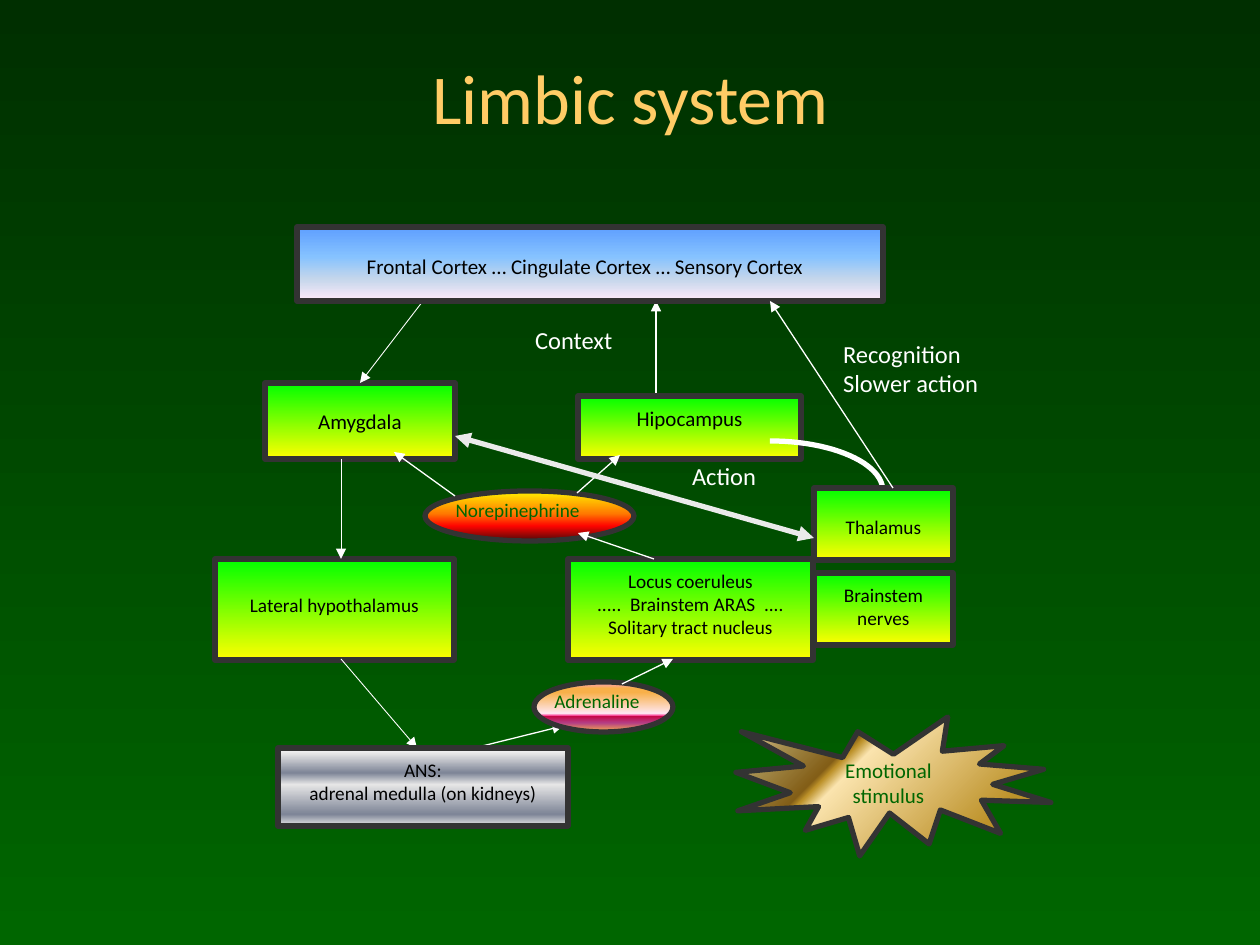
import math
from dataclasses import dataclass

from lxml import etree
from pptx import Presentation
from pptx import util as u
from pptx.dml.color import RGBColor
from pptx.enum import shapes, text
from pptx.oxml import ns

EMU_PER_PX = 914400 / 126
RECT = shapes.MSO_SHAPE.RECTANGLE
OVAL = shapes.MSO_SHAPE.OVAL
SEAL = shapes.MSO_SHAPE.EXPLOSION1
LEFT = text.PP_ALIGN.LEFT
CENTER = text.PP_ALIGN.CENTER


@dataclass(frozen=True)
class Theme:
    font: str = "Calibri"
    title: str = "FFCC66"
    white: str = "FFFFFF"
    black: str = "000000"
    green: str = "006600"
    border: str = "333333"
    action: str = "EAEAEA"
    title_size: int = 40
    label_size: int = 14
    large: int = 12
    small: int = 11
    thick: float = 3
    thin: float = 0.75
    hairline: float = 0.5
    backdrop: tuple = ((0, "002F00"), (100, "006600"))
    lime: tuple = ((0, "00FF00"), (100, "FFFF00"))
    sky: tuple = ((0, "5E9EFF"), (40, "85C2FF"), (70, "C4D6EB"), (100, "FFEBFA"))
    silver: tuple = ((0, "FFFFFF"), (7, "E6E6E6"), (32, "7D8496"),
                     (47, "E6E6E6"), (85, "7D8496"), (100, "E6E6E6"))
    fire: tuple = ((0, "FFF200"), (45, "FF7A00"), (70, "FF0300"), (100, "4D0808"))
    rose: tuple = ((0, "FC9FCB"), (13, "F8B049"), (21, "F8B049"), (63, "FEE7F2"),
                   (67, "F952A0"), (69, "C50849"), (82, "B43E85"), (100, "F8B049"))
    gold: tuple = ((0, "FBE4AE"), (13, "BD922A"), (21, "BD922A"), (63, "FBE4AE"),
                   (67, "BD922A"), (69, "835E17"), (82, "A28949"), (100, "FAE3B7"))


THEME = Theme()


def px(*lengths):
    return [u.Emu(round(length * EMU_PER_PX)) for length in lengths]


def sub(parent, tag, **attributes):
    return etree.SubElement(parent, ns.qn(tag), attributes)


def set_gradient(fill, stops, radial=False):
    fill.gradient()
    gradient = fill._fill._gradFill
    for child in list(gradient):
        gradient.remove(child)
    stop_list = sub(gradient, "a:gsLst")
    for position, color in stops:
        stop = sub(stop_list, "a:gs", pos=str(position * 1000))
        sub(stop, "a:srgbClr", val=color)
    if radial:
        circle = sub(gradient, "a:path", path="circle")
        sub(circle, "a:fillToRect", l="100000", t="100000")
    else:
        sub(gradient, "a:lin", ang="5400000", scaled="0")


def set_line(line, color, width):
    line.color.rgb = RGBColor.from_string(color)
    line.width = u.Pt(width)


def write(frame, lines, size, color, align=LEFT, insets=(0, 0, 0, 0),
          anchor=text.MSO_ANCHOR.TOP):
    frame.word_wrap = True
    frame.vertical_anchor = anchor
    (frame.margin_left, frame.margin_top,
     frame.margin_right, frame.margin_bottom) = px(*insets)
    for index, line in enumerate(lines):
        paragraph = frame.add_paragraph() if index else frame.paragraphs[0]
        paragraph.alignment = align
        run = paragraph.add_run()
        run.text = line
        run.font.name = THEME.font
        run.font.size = u.Pt(size)
        run.font.color.rgb = RGBColor.from_string(color)


def add_label(slide, box, lines, size=THEME.label_size, color=THEME.white, **layout):
    label = slide.shapes.add_textbox(*px(*box))
    write(label.text_frame, lines, size, color, **layout)


def add_node(slide, kind, box, stops, lines, size=THEME.small, color=THEME.black,
             align=CENTER, top=10, right=0):
    node = slide.shapes.add_shape(kind, *px(*box))
    node.shadow.inherit = False
    set_gradient(node.fill, stops, radial=kind == SEAL)
    set_line(node.line, THEME.border, THEME.thick)
    write(node.text_frame, lines, size, color, align, (0, top, right, 0))
    return node


def add_arrow(slide, start, end, width=THEME.thin, color=THEME.white, both=False):
    arrow = slide.shapes.add_connector(
        shapes.MSO_CONNECTOR.STRAIGHT, *px(*start, *end))
    set_line(arrow.line, color, width)
    outline = arrow.line._get_or_add_ln()
    if both:
        sub(outline, "a:headEnd", type="triangle")
    sub(outline, "a:tailEnd", type="triangle")
    sub(arrow._element.spPr, "a:effectLst")
    return arrow


def add_quarter_arc(slide, center, radius_x, radius_y, steps=24):
    angles = [math.pi / 2 * step / steps for step in range(steps + 1)]
    points = [px(center[0] + radius_x * math.sin(angle),
                 center[1] - radius_y * math.cos(angle)) for angle in angles]
    builder = slide.shapes.build_freeform(*points[0])
    builder.add_line_segments(points[1:], close=False)
    arc = builder.convert_to_shape()
    arc.shadow.inherit = False
    arc.fill.background()
    set_line(arc.line, THEME.white, THEME.thick)


def add_body_response(slide):
    add_node(slide, RECT, (215, 559, 239, 101), THEME.lime,
             ["Lateral hypothalamus"], top=34)
    amygdala = add_node(slide, RECT, (265, 383, 190, 76), THEME.lime,
                        ["Amygdala"], THEME.large, top=26)
    add_arrow(slide, (341, 659), (417, 748), THEME.hairline)
    add_arrow(slide, (462, 751), (563, 726))
    add_arrow(slide, (341, 459), (341, 559), THEME.hairline)
    cortex_to_amygdala = add_arrow(slide, (423, 301), (360, 383), THEME.hairline)
    cortex_to_amygdala.end_connect(amygdala, 0)
    add_node(slide, RECT, (278, 748, 290, 78), THEME.silver,
             ["ANS:", "adrenal medulla (on kidneys)"])


def add_arousal(slide):
    add_node(slide, RECT, (578, 396, 223, 63), THEME.lime, ["Hipocampus"], THEME.large)
    add_node(slide, SEAL, (736, 717, 315, 139), THEME.gold,
             ["Emotional", "stimulus"], THEME.large, THEME.green, top=0, right=6)
    add_node(slide, OVAL, (534, 682, 139, 50), THEME.rose, ["Adrenaline"],
             color=THEME.green, align=LEFT, top=0)
    add_node(slide, RECT, (568, 559, 245, 101), THEME.lime,
             ["Locus coeruleus", ".....  Brainstem ARAS  ....", "Solitary tract nucleus"])
    add_node(slide, OVAL, (425, 491, 209, 50), THEME.fire, ["Norepinephrine"],
             color=THEME.green, align=LEFT, top=0)
    for start, end in (((577, 493), (620, 455)), ((455, 496), (394, 452)),
                       ((654, 559), (578, 533)), ((622, 684), (673, 659)),
                       ((656, 393), (656, 301))):
        add_arrow(slide, start, end)


def add_perception(slide):
    add_quarter_arc(slide, (770, 491), 113, 50)
    add_node(slide, RECT, (814, 573, 139, 72), THEME.lime, ["Brainstem", "nerves"])
    add_node(slide, RECT, (297, 227, 586, 74), THEME.sky,
             ["Frontal Cortex … Cingulate Cortex … Sensory Cortex"],
             THEME.large, top=27, right=10)
    add_node(slide, RECT, (814, 488, 139, 72), THEME.lime, ["Thalamus"], top=27)
    add_arrow(slide, (893, 488), (770, 301))
    add_arrow(slide, (814, 538), (455, 436), THEME.thick, THEME.action, both=True)


def main():
    deck = Presentation()
    deck.slide_width, deck.slide_height = px(1260, 945)
    slide = deck.slides.add_slide(deck.slide_layouts[6])
    set_gradient(slide.background.fill, THEME.backdrop)
    add_label(slide, (95, 48, 1071, 97), ["Limbic system"], THEME.title_size, THEME.title,
              align=CENTER, insets=(13, 6, 13, 6), anchor=text.MSO_ANCHOR.MIDDLE)
    add_body_response(slide)
    add_arousal(slide)
    add_perception(slide)
    add_label(slide, (535, 325, 110, 44), ["Context"])
    add_label(slide, (692, 461, 110, 44), ["Action"])
    add_label(slide, (843, 339, 180, 82), ["Recognition", "Slower action"])
    deck.save("out.pptx")


if __name__ == "__main__":
    main()
